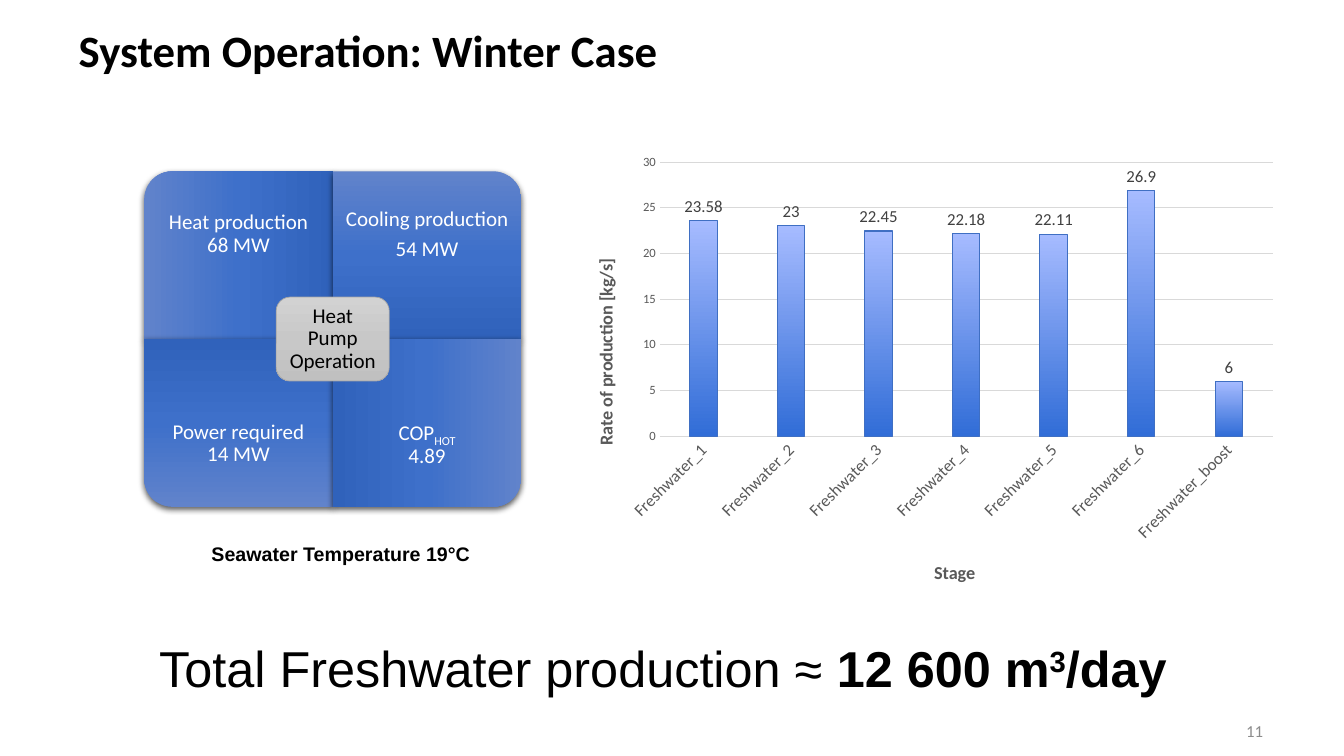
from pptx import Presentation
from pptx.chart.data import CategoryChartData
from pptx.dml.color import RGBColor
from pptx.enum.chart import XL_CHART_TYPE, XL_LABEL_POSITION, XL_TICK_MARK
from pptx.enum.shapes import MSO_SHAPE
from pptx.enum.text import MSO_ANCHOR, PP_ALIGN
from pptx.oxml import parse_xml
from pptx.oxml.ns import nsdecls, qn
from pptx.util import Pt

BREAK = "\n"


def rgb(value):
    """Turn a hex string into a colour."""
    return RGBColor.from_string(value)


def set_font(font, size, color, bold=False, name="Calibri"):
    """Set the face, size, weight and colour of a font."""
    font.name, font.size, font.bold = name, Pt(size), bold
    font.color.rgb = rgb(color)


def set_gradient(element, fill, stops, angle):
    """Fill with evenly spaced colour stops."""
    fill.gradient()
    fill.gradient_angle = angle
    stop_list = element.find(".//" + qn("a:gsLst"))
    for old in list(stop_list):
        stop_list.remove(old)
    for i, color in enumerate(stops):
        pos = i * 100000 // (len(stops) - 1)
        stop_list.append(parse_xml(f'<a:gs {nsdecls("a")} pos="{pos}"><a:srgbClr val="{color}"/></a:gs>'))


def set_layout(element, index, x, y, w=None, h=None):
    """Place a chart part by fractions of the chart area."""
    old = element.find(qn("c:layout"))
    if old is not None:
        element.remove(old)
    target = '<c:layoutTarget val="inner"/>' if w else ""
    size = f'<c:w val="{w}"/><c:h val="{h}"/>' if w else ""
    element.insert(index, parse_xml(
        f'<c:layout {nsdecls("c")}><c:manualLayout>{target}<c:xMode val="edge"/><c:yMode val="edge"/>'
        f'<c:x val="{x}"/><c:y val="{y}"/>{size}</c:manualLayout></c:layout>'))


class SlideBuilder:
    """Holds the style and the current slide."""

    BLUES = ("6183CB", "3E70CA", "3062BB")
    GREYS = ("D2D2D2", "C8C8C8", "C0C0C0")
    BAR = ("316DD7", "A6BBFF")

    def __init__(self, prs):
        """Start a title-only slide."""
        self.s = prs.slides.add_slide(prs.slide_layouts[5])

    def frame(self, sp, box, inset=0, anchor=MSO_ANCHOR.TOP):
        """Place a shape and prepare its text frame."""
        sp.left, sp.top, sp.width, sp.height = map(Pt, box)
        tf = sp.text_frame
        tf.word_wrap, tf.vertical_anchor = True, anchor
        tf.margin_left = tf.margin_right = tf.margin_top = tf.margin_bottom = Pt(inset)
        return tf

    def run(self, p, text, size, color="000000", bold=False, name="Calibri", base=0):
        """Add one run, raised or lowered by a percentage."""
        r = p.add_run()
        r.text = text
        set_font(r.font, size, color, bold, name)
        if base:
            r.font._element.set("baseline", str(base * 1000))

    def title(self, text, box):
        """Fill the title placeholder."""
        p = self.frame(self.s.shapes.title, box).paragraphs[0]
        p.alignment, p.line_spacing = PP_ALIGN.LEFT, 0.9
        self.run(p, text, 32, bold=True)

    def line(self, box, runs, inset=0, align=PP_ALIGN.LEFT, anchor=MSO_ANCHOR.TOP):
        """Add a one-line text box from runs of options."""
        p = self.frame(self.s.shapes.add_textbox(0, 0, 0, 0), box, inset, anchor).paragraphs[0]
        p.alignment = align
        for options in runs:
            self.run(p, **options)

    def label(self, box, paragraphs, color, inset):
        """Add centred diagram text."""
        tf = self.frame(self.s.shapes.add_textbox(0, 0, 0, 0), box, inset, MSO_ANCHOR.MIDDLE)
        for i, parts in enumerate(paragraphs):
            p = tf.add_paragraph() if i else tf.paragraphs[0]
            p.alignment, p.line_spacing, p.space_after = PP_ALIGN.CENTER, 0.9, Pt(5.25)
            for text, base in parts:
                if text == BREAK:
                    p.add_line_break()
                else:
                    self.run(p, text, 15, color, base=base)

    def panel(self, kind, center, size, stops, rotation=0, outline=None):
        """Add a gradient panel around a centre point."""
        (cx, cy), (w, h) = center, size
        sp = self.s.shapes.add_shape(kind, Pt(cx - w / 2), Pt(cy - h / 2), Pt(w), Pt(h))
        sp.rotation = rotation
        set_gradient(sp._element, sp.fill, stops, 270)
        sp.shadow.inherit = False
        if outline:
            sp.line.color.rgb, sp.line.width = rgb(outline), Pt(0.5)
        else:
            sp.line.fill.background()
            sp._element.spPr.find(qn("a:effectLst")).append(parse_xml(
                f'<a:outerShdw {nsdecls("a")} blurRad="{Pt(4.5)}" dist="{Pt(1.5)}" dir="5400000" algn="ctr" '
                'rotWithShape="0"><a:srgbClr val="000000"><a:alpha val="63000"/></a:srgbClr></a:outerShdw>'))

    def axis(self, axis, title, size, turn, place):
        """Format one axis and its title."""
        axis.major_tick_mark = axis.minor_tick_mark = XL_TICK_MARK.NONE
        set_font(axis.tick_labels.font, size, "595959")
        tf = axis.axis_title.text_frame
        self.run(tf.paragraphs[0], title, 13, "595959", True)
        body = tf._txBody.find(qn("a:bodyPr"))
        body.set("rot", str(turn * 60000))
        body.set("vert", "horz")
        set_layout(axis.axis_title._element, 1, *place)

    def chart(self, box, categories, values):
        """Add the column chart."""
        data = CategoryChartData()
        data.categories = categories
        data.add_series("Series 1", values)
        chart = self.s.shapes.add_chart(XL_CHART_TYPE.COLUMN_CLUSTERED, *map(Pt, box), data).chart
        set_font(chart.font, 10, "000000")
        chart.has_legend = chart.has_title = False
        x_axis, y_axis = chart.category_axis, chart.value_axis
        self.axis(x_axis, "Stage", 12, 0, (0.507, 0.905))
        self.axis(y_axis, "Rate of production [kg/s]", 9, -90, (0.036, 0.24))
        x_axis._element.find(qn("c:txPr")).find(qn("a:bodyPr")).set("rot", "-2700000")
        y_axis.minimum_scale, y_axis.maximum_scale, y_axis.major_unit = 0, 30, 5
        y_axis.format.line.fill.background()
        for rule in (x_axis.format.line, y_axis.major_gridlines.format.line):
            rule.color.rgb, rule.width = rgb("D9D9D9"), Pt(0.75)
        set_layout(chart._chartSpace.find(".//" + qn("c:plotArea")), 0, 0.132, 0.035, 0.848, 0.603)
        plot = chart.plots[0]
        plot.gap_width, plot.overlap, plot.vary_by_categories = 219, -27, False
        series = plot.series[0]
        set_gradient(series._element, series.format.fill, self.BAR, 90)
        series.format.line.color.rgb, series.format.line.width = rgb("3F6FC3"), Pt(0.75)
        labels = series.data_labels
        labels.show_value, labels.position = True, XL_LABEL_POSITION.OUTSIDE_END
        set_font(labels.font, 12, "404040")


def main():
    """Build the slide."""
    prs = Presentation()
    prs.slide_width, prs.slide_height = Pt(960), Pt(540)
    b = SlideBuilder(prs)
    b.title("System Operation: Winter Case", (56.2, 20.2, 855.4, 70.6))
    b.line((877, 513.4, 25.2, 17.3), [dict(text="11", size=12, color="8C8C8C")],
           align=PP_ALIGN.RIGHT, anchor=MSO_ANCHOR.MIDDLE)

    left, top, w, h, text_h = 103, 122.4, 134.7, 119.8, 90
    quadrants = [
        (270, [[("Heat production", 0), (BREAK, 0), ("68 MW", 0)]]),
        (0, [[("Cooling production", 0)], [("54 MW", 0)]]),
        (180, [[("Power required", 0), (BREAK, 0), ("14 MW", 0)]]),
        (90, [[("COP", 0), ("HOT", -25), (BREAK, 0), ("4.89", 0)]]),
    ]
    for i, (rotation, paragraphs) in enumerate(quadrants):
        row, col = divmod(i, 2)
        x, y = left + col * w, top + row * h
        size = (h, w) if rotation % 180 else (w, h)
        b.panel(MSO_SHAPE.ROUND_1_RECTANGLE, (x + w / 2, y + h / 2), size, b.BLUES, rotation)
        b.label((x, y + row * (h - text_h), w, text_h), paragraphs, "FFFFFF", 8.4)
    b.panel(MSO_SHAPE.ROUNDED_RECTANGLE, (left + w, top + h), (80.8, 60), b.GREYS, outline="A5A5A5")
    b.label((left + w - 37.5, top + h - 27, 75, 54), [[("Heat Pump Operation", 0)]], "000000", 4.5)

    arial = dict(name="Arial")
    b.line((144, 380.2, 213, 24.5), [dict(text="Seawater Temperature 19°C", size=14, bold=True, **arial)], 7.2)
    total = dict(size=36, bold=True, **arial)
    b.line((106.6, 447.8, 747.4, 51), [
        dict(text="Total Freshwater production ≈ ", size=36, **arial),
        dict(text="12 600 m", **total), dict(text="3", base=30, **total), dict(text="/day", **total)], 7.2)
    stages = [f"Freshwater_{n}" for n in (1, 2, 3, 4, 5, 6, "boost")]
    b.chart((403.2, 104.4, 516.2, 324.7), stages, (23.58, 23, 22.45, 22.18, 22.11, 26.9, 6))
    prs.save("out.pptx")


if __name__ == "__main__":
    main()
